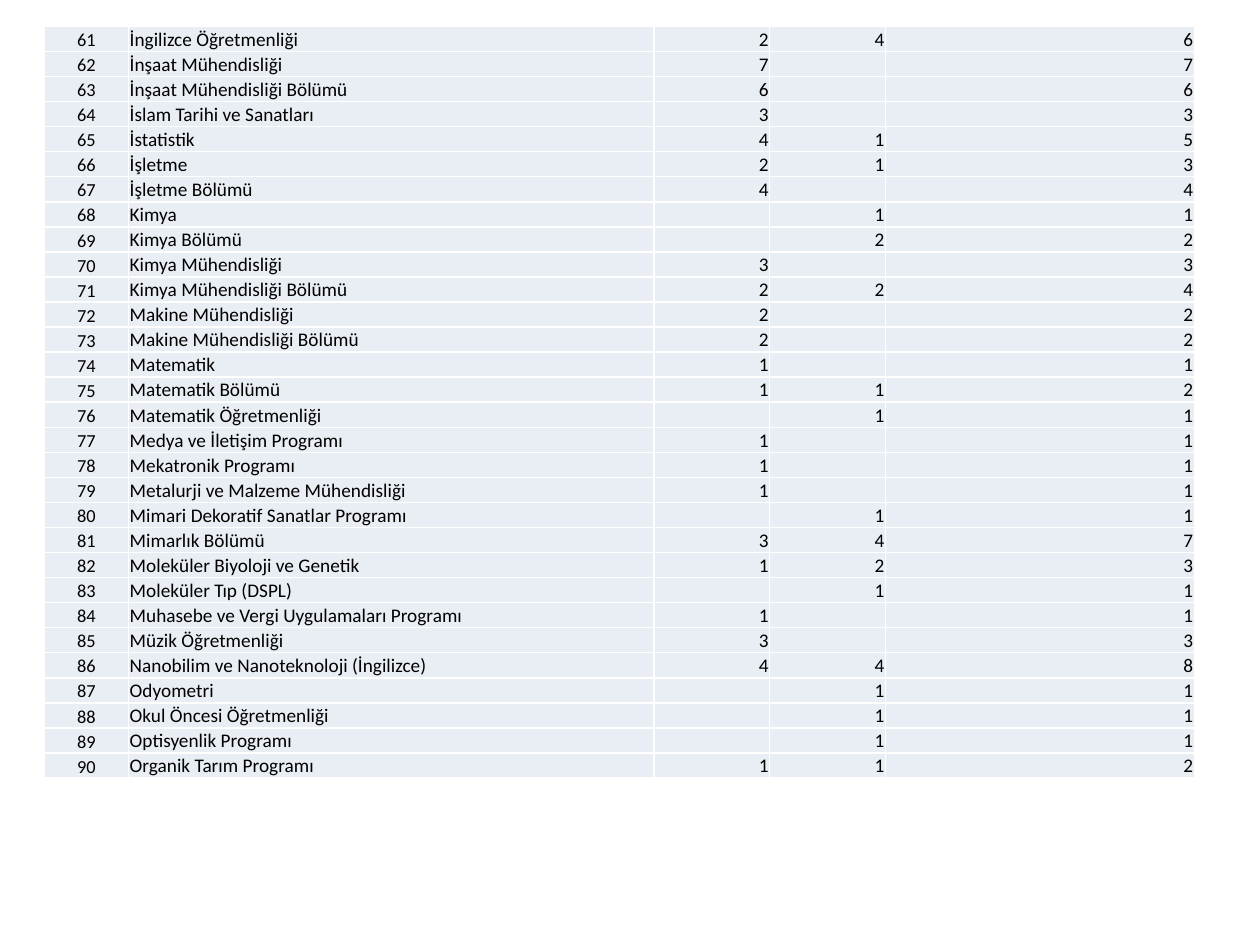
from dataclasses import dataclass

from lxml.etree import SubElement
from pptx import Presentation
from pptx.dml.color import RGBColor
from pptx.enum.text import MSO_ANCHOR, PP_ALIGN
from pptx.oxml.ns import qn
from pptx.util import Inches, Pt


@dataclass(frozen=True)
class Theme:
    font: str = "Calibri"
    text: str = "000000"
    cell: str = "E9EDF4"
    border: str = "FFFFFF"
    number_size: float = 10.5
    body_size: float = 11
    border_width: float = 1


theme = Theme()

FIRST_NUMBER = 61
# Programme, first count, second count; the last column is their sum.
programmes = [
    ("İngilizce Öğretmenliği", 2, 4),
    ("İnşaat Mühendisliği", 7, 0),
    ("İnşaat Mühendisliği Bölümü", 6, 0),
    ("İslam Tarihi ve Sanatları", 3, 0),
    ("İstatistik", 4, 1),
    ("İşletme", 2, 1),
    ("İşletme Bölümü", 4, 0),
    ("Kimya", 0, 1),
    ("Kimya Bölümü", 0, 2),
    ("Kimya Mühendisliği", 3, 0),
    ("Kimya Mühendisliği Bölümü", 2, 2),
    ("Makine Mühendisliği", 2, 0),
    ("Makine Mühendisliği Bölümü", 2, 0),
    ("Matematik", 1, 0),
    ("Matematik Bölümü", 1, 1),
    ("Matematik Öğretmenliği", 0, 1),
    ("Medya ve İletişim Programı", 1, 0),
    ("Mekatronik Programı", 1, 0),
    ("Metalurji ve Malzeme Mühendisliği", 1, 0),
    ("Mimari Dekoratif Sanatlar Programı", 0, 1),
    ("Mimarlık Bölümü", 3, 4),
    ("Moleküler Biyoloji ve Genetik", 1, 2),
    ("Moleküler Tıp (DSPL)", 0, 1),
    ("Muhasebe ve Vergi Uygulamaları Programı", 1, 0),
    ("Müzik Öğretmenliği", 3, 0),
    ("Nanobilim ve Nanoteknoloji (İngilizce)", 4, 4),
    ("Odyometri", 0, 1),
    ("Okul Öncesi Öğretmenliği", 0, 1),
    ("Optisyenlik Programı", 0, 1),
    ("Organik Tarım Programı", 1, 1),
]

# Width, alignment and type size of each column.
columns = [
    (0.67, PP_ALIGN.CENTER, theme.number_size),
    (4.17, PP_ALIGN.LEFT, theme.body_size),
    (0.92, PP_ALIGN.RIGHT, theme.body_size),
    (0.92, PP_ALIGN.RIGHT, theme.body_size),
    (2.45, PP_ALIGN.RIGHT, theme.body_size),
]


def add_borders(cell):
    properties = cell._tc.get_or_add_tcPr()
    for side in ("a:lnL", "a:lnR", "a:lnT", "a:lnB"):
        line = SubElement(properties, qn(side), w=str(Pt(theme.border_width)))
        fill = SubElement(line, qn("a:solidFill"))
        SubElement(fill, qn("a:srgbClr"), val=theme.border)


def fill_cell(cell, content, alignment, size):
    add_borders(cell)
    cell.fill.solid()
    cell.fill.fore_color.rgb = RGBColor.from_string(theme.cell)
    cell.margin_left = cell.margin_right = cell.margin_top = Inches(0.01)
    cell.margin_bottom = 0
    cell.vertical_anchor = MSO_ANCHOR.BOTTOM
    paragraph = cell.text_frame.paragraphs[0]
    paragraph.text = content
    paragraph.alignment = alignment
    for run in paragraph.runs:
        run.font.name = theme.font
        run.font.size = Pt(size)
        run.font.color.rgb = RGBColor.from_string(theme.text)
    if not content:
        # Keeps an empty cell from stretching its row to the default type size.
        SubElement(paragraph._p, qn("a:endParaRPr"), sz=str(int(size * 100)))


prs = Presentation()
prs.slide_width = Inches(10)
prs.slide_height = Inches(7.5)
slide = prs.slides.add_slide(prs.slide_layouts[6])

counts_table = slide.shapes.add_table(
    len(programmes), len(columns),
    Inches(0.35), Inches(0.21), Inches(9.13), Inches(5.81),
).table
counts_table.first_row = False
counts_table.horz_banding = False
for column, (width, _, _) in zip(counts_table.columns, columns):
    column.width = Inches(width)

for row, (programme, first, second) in enumerate(programmes):
    contents = (FIRST_NUMBER + row, programme, first, second, first + second)
    for col, (content, (_, alignment, size)) in enumerate(zip(contents, columns)):
        fill_cell(counts_table.cell(row, col), str(content or ""), alignment, size)

prs.save("out.pptx")
